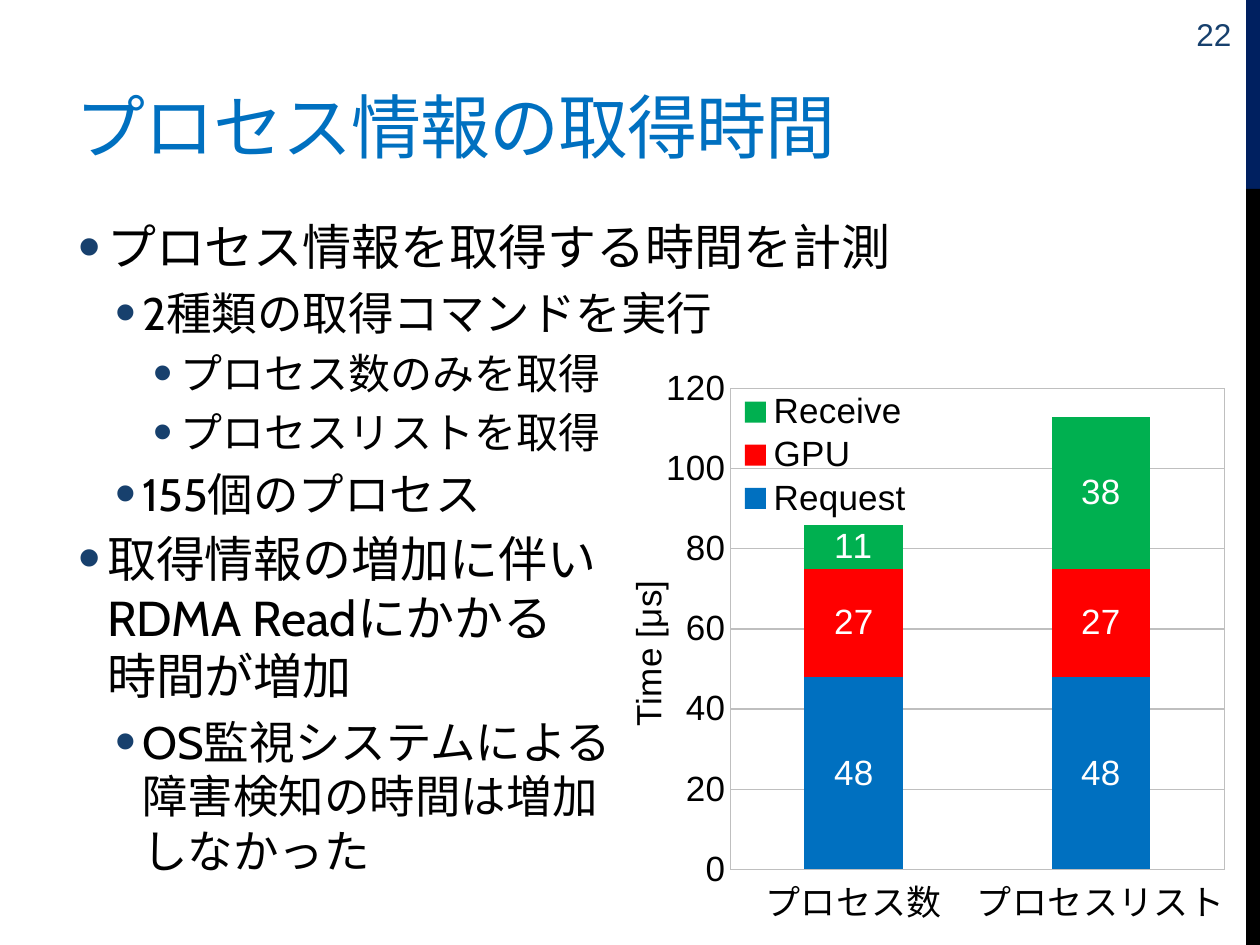
import copy
import pptx
import pptx.chart.data
import pptx.dml.color
import pptx.enum.chart
import pptx.enum.shapes
import pptx.enum.text
import pptx.oxml
import pptx.oxml.ns
import pptx.util

theme = {
    "sans": "Arial", "text": "Cabin",
    "black": "000000", "white": "FFFFFF", "navy": "002060", "blue": "0070C0",
    "red": "FF0000", "green": "00B050", "dot": "17406D", "grid": "BFBFBF",
    "title": 40, "list": [28, 26, 24], "chart": 20, "page": 18,
}
Pt = pptx.util.Pt
qn = pptx.oxml.ns.qn
nsdecls = pptx.oxml.ns.nsdecls
rgb = pptx.dml.color.RGBColor.from_string
enum = pptx.enum.chart
align = pptx.enum.text.PP_ALIGN
anchor = pptx.enum.text.MSO_ANCHOR

deck = pptx.Presentation()
deck.slide_width = wide = pptx.util.Inches(10)
deck.slide_height = high = pptx.util.Inches(7.5)
slide = deck.slides.add_slide(deck.slide_layouts[1])
title, body = slide.placeholders


def box(left, top, width, height):
    return [int(share * side / 100) for share, side in
            zip((left, top, width, height), (wide, high, wide, high))]


def write(para, text, size, color="black", font="text", side=None, space=0):
    para.text = text
    para.alignment = side
    for run in para.runs:
        run.font.size = Pt(size)
        run.font.name = theme[font]
        run.font.bold = False
        run.font.color.rgb = rgb(theme[color])
        if space:
            run.font._element.set("spc", str(space))
    for line in para._p.findall(qn("a:br")):
        line.append(copy.deepcopy(para.runs[0].font._element))


for top, height, color in [(0, 20, "navy"), (20, 80, "black")]:
    bar = slide.shapes.add_shape(pptx.enum.shapes.MSO_SHAPE.RECTANGLE,
                                 *box(98.9, top, 1.2, height))
    bar.shadow.inherit = False
    bar.fill.solid()
    bar.fill.fore_color.rgb = rgb(theme[color])
    bar.line.fill.background()
    title.element.addprevious(bar.element)

data = pptx.chart.data.CategoryChartData()
data.categories = ["プロセス数", "プロセスリスト"]
parts = [("Request", (48, 48), "blue"), ("GPU", (27, 27), "red"),
         ("Receive", (11, 38), "green")]
for name, vals, color in parts:
    data.add_series(name, vals)
frame = slide.shapes.add_chart(enum.XL_CHART_TYPE.COLUMN_STACKED,
                               *box(48.4, 38.67, 50.3, 61.33), data)
title.element.addprevious(frame.element)
chart = frame.chart
chart.has_title = False
chart.font.size = Pt(theme["chart"])
chart.font.name = theme["sans"]
chart.font.color.rgb = rgb(theme["black"])
plot = chart.plots[0]
plot.gap_width = 150
plot.overlap = 100

for row, (name, vals, color) in zip(plot.series, parts):
    row.format.fill.solid()
    row.format.fill.fore_color.rgb = rgb(theme[color])
    label = row.data_labels
    label.show_value = True
    label.position = enum.XL_LABEL_POSITION.CENTER
    label.font.size = Pt(theme["chart"])
    label.font.name = theme["sans"]
    label.font.color.rgb = rgb(theme["white"])

base, scale = chart.category_axis, chart.value_axis
for axis in (base, scale):
    axis.major_tick_mark = enum.XL_TICK_MARK.NONE
    axis.minor_tick_mark = enum.XL_TICK_MARK.NONE
scale.minimum_scale, scale.maximum_scale, scale.major_unit = 0, 120, 20
scale.format.line.fill.background()
for line in (base.format.line, scale.major_gridlines.format.line):
    line.color.rgb = rgb(theme["grid"])
    line.width = Pt(0.75)
words = scale.axis_title.text_frame
words._txBody.bodyPr.set("rot", "-5400000")
words._txBody.bodyPr.set("vert", "horz")
write(words.paragraphs[0], "Time [μs]", theme["chart"], font="sans")
chart.has_legend = True
chart.legend.position = enum.XL_LEGEND_POSITION.LEFT
chart.legend.include_in_layout = False

area = chart._chartSpace.chart.plotArea
places = [(area, "inner", (0.19, 0.04, 0.78, 0.83)),
          (chart.legend._element, "", (0.2, 0.04, 0.28, 0.23)),
          (scale.axis_title._element, "", (0.015, 0.36))]
for node, mode, spot in places:
    for old in node.findall(qn("c:layout")):
        node.remove(old)
    rules = f'<c:layoutTarget val="{mode}"/>' if mode else ""
    rules += '<c:xMode val="edge"/><c:yMode val="edge"/>'
    rules += "".join(f'<c:{key} val="{val}"/>' for key, val in zip("xywh", spot))
    shape = pptx.oxml.parse_xml(
        f'<c:layout {nsdecls("c")}><c:manualLayout>{rules}</c:manualLayout></c:layout>')
    node.insert(0 if node is area else 1, shape)
area.append(pptx.oxml.parse_xml(
    f'<c:spPr {nsdecls("c", "a")}><a:noFill/><a:ln w="9525"><a:solidFill>'
    f'<a:srgbClr val="{theme["grid"]}"/></a:solidFill></a:ln></c:spPr>'))

title.left, title.top, title.width, title.height = box(5, 2.27, 90.2, 16.13)
title.text_frame.vertical_anchor = anchor.BOTTOM
write(title.text_frame.paragraphs[0], "プロセス情報の取得時間", theme["title"],
      "blue", side=align.LEFT, space=-50)

body.left, body.top, body.width, body.height = box(5, 22.27, 90.2, 77.73)
text = body.text_frame
text.auto_size = pptx.enum.text.MSO_AUTO_SIZE.NONE
text.margin_left = text.margin_right = pptx.util.Inches(0.12)
lines = [
    (0, "プロセス情報を取得する時間を計測"),
    (1, "2種類の取得コマンドを実行"),
    (2, "プロセス数のみを取得"),
    (2, "プロセスリストを取得"),
    (1, "155個のプロセス"),
    (0, "取得情報の増加に伴い\nRDMA Readにかかる\n時間が増加"),
    (1, "OS監視システムによる\n障害検知の時間は増加\nしなかった"),
]
dents = [(0.23, 0.23), (0.51, 0.21), (0.81, 0.21)]
for num, (level, line) in enumerate(lines):
    para = text.add_paragraph() if num else text.paragraphs[0]
    write(para, line, theme["list"][level])
    para.level = level
    if level == 0:
        para.space_before = Pt(4.5)
    props = para._p.get_or_add_pPr()
    left, hang = dents[level]
    props.set("marL", str(pptx.util.Inches(left)))
    props.set("indent", str(-pptx.util.Inches(hang)))
    for mark in (f'<a:buClr {nsdecls("a")}><a:srgbClr val="{theme["dot"]}"/></a:buClr>',
                 f'<a:buSzPct {nsdecls("a")} val="130000"/>',
                 f'<a:buFont {nsdecls("a")} typeface="{theme["sans"]}"/>',
                 f'<a:buChar {nsdecls("a")} char="•"/>'):
        props.append(pptx.oxml.parse_xml(mark))

page = slide.shapes.add_textbox(*box(91.2, 0.93, 7.5, 5.33)).text_frame
page.word_wrap = True
page.vertical_anchor = anchor.MIDDLE
write(page.paragraphs[0], "22", theme["page"], "dot", "sans", align.RIGHT)

deck.save("out.pptx")
